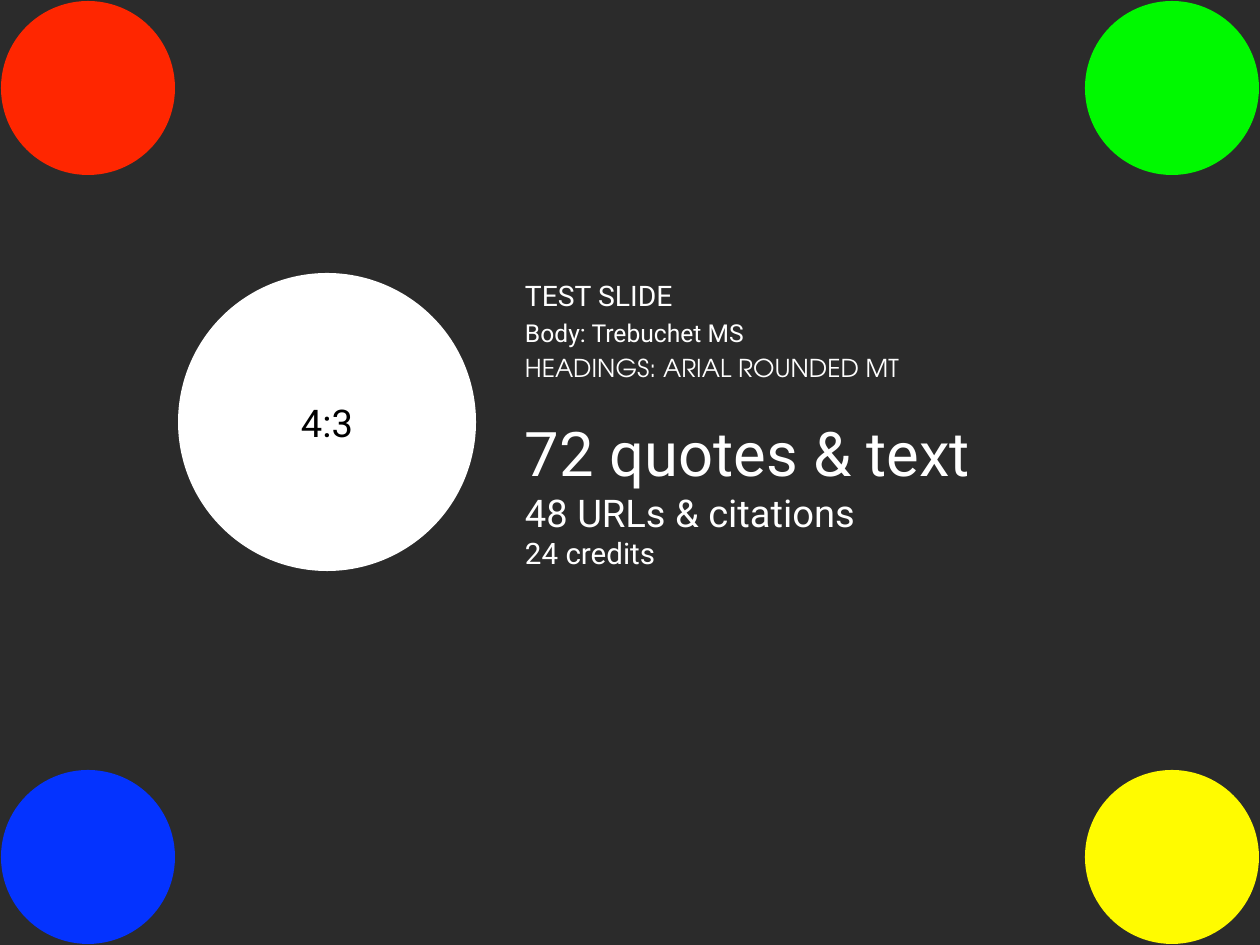
from dataclasses import dataclass

from lxml.etree import SubElement
from pptx import Presentation
from pptx.dml.color import RGBColor
from pptx.enum.shapes import MSO_SHAPE
from pptx.enum.text import MSO_ANCHOR as ANCHOR, MSO_AUTO_SIZE as AUTO, PP_ALIGN as ALIGN
from pptx.oxml.ns import qn
from pptx.shapes.autoshape import Shape
from pptx.slide import Slide
from pptx.text.text import TextFrame
from pptx.util import Pt

PX = 10320  # EMU per px
WIDTH, HEIGHT = 1260, 945
CORNER, MARGIN = 174, 1
INSET = 3
BODY_FONT, HEADING_FONT = "Roboto", "TeX Gyre Adventor"
COLORS = {
    "background": "2B2B2B",
    "white": "FFFFFF",
    "black": "000000",
    "red": "FF2600",
    "green": "00F900",
    "blue": "0433FF",
    "yellow": "FFFB00",
}


@dataclass
class Circle:
    left: int
    top: int
    size: int
    color: str


@dataclass
class Line:
    text: str
    size: int
    font: str = BODY_FONT
    color: str = "white"


RIGHT = WIDTH - CORNER - MARGIN
BOTTOM = HEIGHT - CORNER - MARGIN
CORNERS = [
    Circle(MARGIN, BOTTOM, CORNER, "blue"),
    Circle(MARGIN, MARGIN, CORNER, "red"),
    Circle(RIGHT, BOTTOM, CORNER, "yellow"),
    Circle(RIGHT, MARGIN, CORNER, "green"),
]
RATIO_CIRCLE = Circle(178, 273, 298, "white")
RATIO = [Line("4:3", 31, color="black")]
FONTS = [
    Line("TEST SLIDE", 23),
    Line("Body: Trebuchet MS", 20),
    Line("HEADINGS: ARIAL ROUNDED MT", 20, HEADING_FONT),
]
SIZES = [
    Line("72 quotes & text", 50),
    Line("48 URLs & citations", 31),
    Line("24 credits", 24),
]


def rgb(name: str) -> RGBColor:
    return RGBColor.from_string(COLORS[name])


def write(tf: TextFrame, lines: list[Line], align: ALIGN = ALIGN.LEFT,
          anchor: ANCHOR = ANCHOR.TOP, spacing: float = 1.0) -> None:
    """Fill the frame with one unbulleted paragraph per line."""
    tf.word_wrap = True
    tf.auto_size = AUTO.NONE
    tf.vertical_anchor = anchor
    tf.margin_left = tf.margin_right = tf.margin_top = tf.margin_bottom = INSET * PX
    tf.text = "\n".join(line.text for line in lines)
    for p, line in zip(tf.paragraphs, lines):
        pPr = p._p.get_or_add_pPr()
        pPr.set("marL", "0")
        pPr.set("indent", "0")
        SubElement(pPr, qn("a:buNone"))
        p.alignment = align
        p.line_spacing = spacing
        p.space_before = Pt(0)
        font = p.runs[0].font
        font.name = line.font
        font.size = Pt(line.size)
        font.color.rgb = rgb(line.color)


def place(sp: Shape, left: int, top: int, width: int, height: int) -> None:
    sp.left, sp.top, sp.width, sp.height = (v * PX for v in (left, top, width, height))


def add_circle(s: Slide, c: Circle) -> Shape:
    sp = s.shapes.add_shape(MSO_SHAPE.OVAL, c.left * PX, c.top * PX, c.size * PX, c.size * PX)
    sp.shadow.inherit = False
    sp.fill.solid()
    sp.fill.fore_color.rgb = rgb(c.color)
    sp.line.fill.background()
    return sp


def main() -> None:
    prs = Presentation()
    prs.slide_width, prs.slide_height = WIDTH * PX, HEIGHT * PX
    s = prs.slides.add_slide(prs.slide_layouts[1])
    s.background.fill.solid()
    s.background.fill.fore_color.rgb = rgb("background")

    for corner in CORNERS:
        add_circle(s, corner)
    ratio = add_circle(s, RATIO_CIRCLE)
    write(ratio.text_frame, RATIO, ALIGN.CENTER, ANCHOR.MIDDLE)

    title, body = s.shapes.title, s.placeholders[1]
    place(title, 522, 268, 433, 118)
    write(title.text_frame, FONTS, spacing=1.2)
    place(body, 522, 412, 630, 162)
    write(body.text_frame, SIZES)

    prs.save("out.pptx")


if __name__ == "__main__":
    main()
